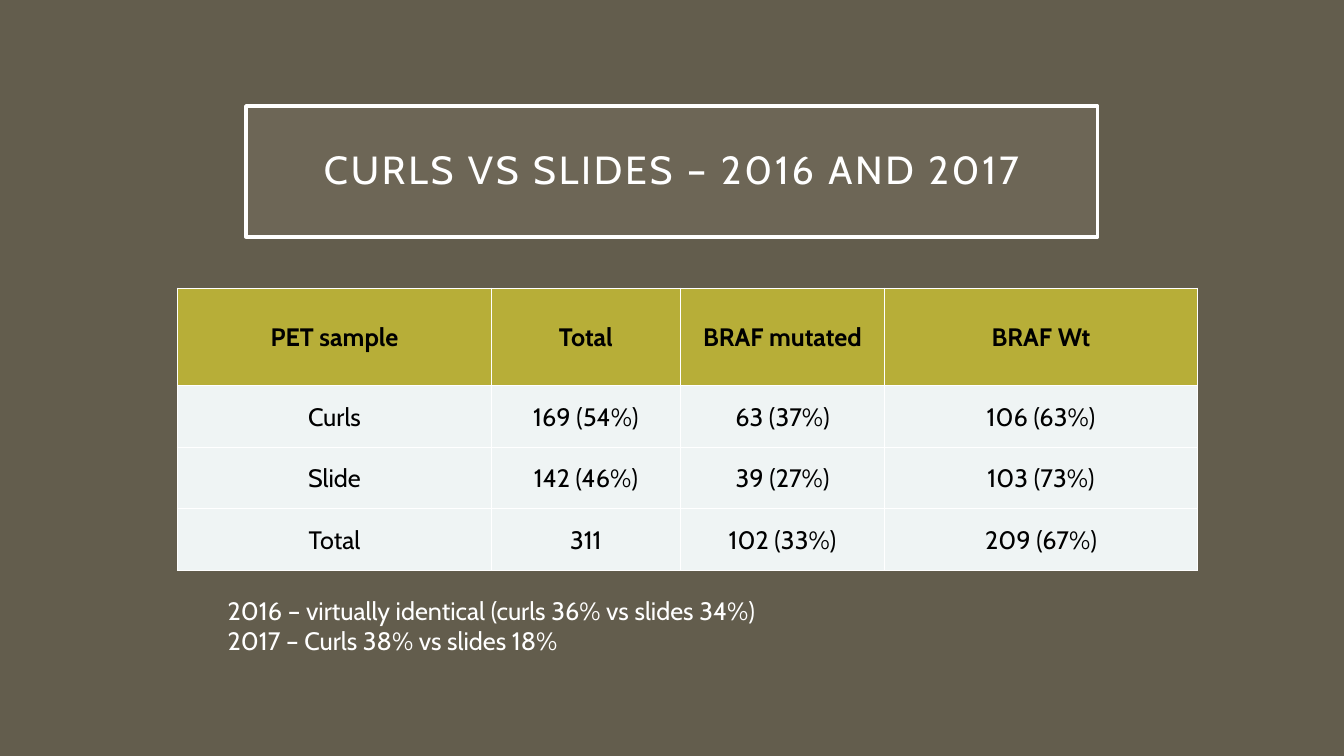
from dataclasses import dataclass

from lxml import etree
from pptx import Presentation
from pptx.dml.color import RGBColor
from pptx.enum import text as t
from pptx.oxml import ns
from pptx.util import Cm, Pt

FONT = "Cabin"
WHITE, BLACK = "FFFFFF", "000000"
BACKGROUND, TITLE_TINT = "635D4D", "A7A08E"
HEADER_FILL, BODY_FILL = "B7AE38", "EFF4F4"


@dataclass
class Column:
    width: float
    cells: tuple[str, ...]


COLUMNS = [
    Column(7.92, ("PET sample", "Curls", "Slide", "Total")),
    Column(4.75, ("Total", "169 (54%)", "142 (46%)", "311")),
    Column(5.16, ("BRAF mutated", "63 (37%)", "39 (27%)", "102 (33%)")),
    Column(7.87, ("BRAF Wt", "106 (63%)", "103 (73%)", "209 (67%)")),
]
ROW_HEIGHTS = [2.46, 1.55, 1.55, 1.55]
NOTES = [
    "2016 – virtually identical (curls 36% vs slides 34%)",
    "2017 – Curls 38% vs slides 18%",
]


def paint(fill, colour: str) -> None:
    fill.solid()
    fill.fore_color.rgb = RGBColor.from_string(colour)


def write(para, words: str, *, size: float = 18, colour: str = BLACK,
          bold: bool = False, align=t.PP_ALIGN.CENTER):
    para.alignment = align
    span = para.add_run()
    span.text = words
    span.font.name = FONT
    span.font.size = Pt(size)
    span.font.bold = bold
    span.font.color.rgb = RGBColor.from_string(colour)
    return span


def add_borders(cell, colour: str, width: float) -> None:
    properties = cell._tc.get_or_add_tcPr()
    for position, side in enumerate(("lnL", "lnR", "lnT", "lnB")):
        line = etree.Element(ns.qn(f"a:{side}"), w=str(Pt(width)))
        solid = etree.SubElement(line, ns.qn("a:solidFill"))
        etree.SubElement(solid, ns.qn("a:srgbClr"), val=colour)
        properties.insert(position, line)


def add_title(page) -> None:
    box = page.shapes.title
    box.left, box.top, box.width, box.height = Cm(6.2), Cm(2.67), Cm(21.46), Cm(3.3)
    paint(box.fill, TITLE_TINT)
    tint = box.fill._xPr.find(".//" + ns.qn("a:srgbClr"))
    etree.SubElement(tint, ns.qn("a:alpha"), val="15000")
    paint(box.line.fill, WHITE)
    box.line.width = Pt(2.5)
    frame = box.text_frame
    frame.word_wrap = True
    frame.vertical_anchor = t.MSO_ANCHOR.MIDDLE
    frame.margin_left = frame.margin_right = Cm(0.5)
    frame.margin_top = frame.margin_bottom = Cm(0.5)
    para = frame.paragraphs[0]
    para.line_spacing = 0.9
    span = write(para, "CURLS VS SLIDES – 2016 AND 2017", size=28, colour=WHITE)
    span.font._element.set("spc", "200")


def add_results(page) -> None:
    width = sum(column.width for column in COLUMNS)
    table = page.shapes.add_table(
        len(ROW_HEIGHTS), len(COLUMNS),
        Cm(4.47), Cm(7.26), Cm(width), Cm(sum(ROW_HEIGHTS))).table
    for row, height in zip(table.rows, ROW_HEIGHTS):
        row.height = Cm(height)
    for x, column in enumerate(COLUMNS):
        table.columns[x].width = Cm(column.width)
        for y, words in enumerate(column.cells):
            cell = table.cell(y, x)
            cell.margin_left = cell.margin_right = cell.margin_top = Cm(0.03)
            cell.margin_bottom = 0
            cell.vertical_anchor = t.MSO_ANCHOR.MIDDLE
            paint(cell.fill, BODY_FILL if y else HEADER_FILL)
            add_borders(cell, WHITE, 1)
            write(cell.text_frame.paragraphs[0], words, bold=y == 0)


def add_notes(page) -> None:
    box = page.shapes.add_textbox(Cm(5.49), Cm(14.88), Cm(23.77), Cm(1.8))
    frame = box.text_frame
    frame.word_wrap = True
    frame.auto_size = t.MSO_AUTO_SIZE.SHAPE_TO_FIT_TEXT
    for index, words in enumerate(NOTES):
        para = frame.add_paragraph() if index else frame.paragraphs[0]
        write(para, words, colour=WHITE, align=t.PP_ALIGN.LEFT)


def main() -> None:
    # Page
    deck = Presentation()
    deck.slide_width, deck.slide_height = Cm(33.87), Cm(19.05)
    page = deck.slides.add_slide(deck.slide_layouts[5])
    paint(page.background.fill, BACKGROUND)

    # Content
    add_title(page)
    add_results(page)
    add_notes(page)
    deck.save("out.pptx")


if __name__ == "__main__":
    main()
